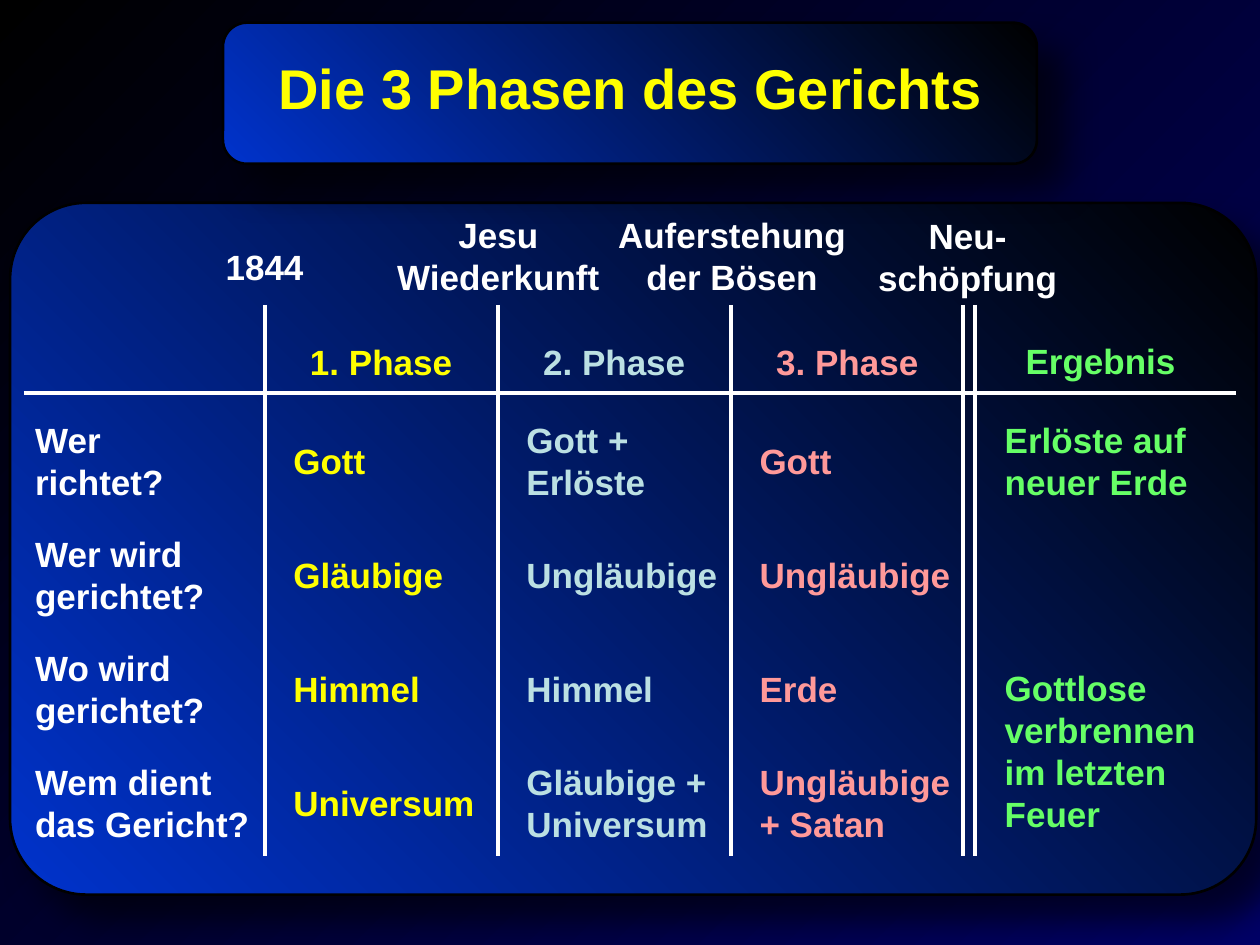
from dataclasses import dataclass

from lxml import etree
from pptx import Presentation
from pptx import util as u
from pptx.dml.color import RGBColor
from pptx.enum import shapes, text
from pptx.oxml import parse_xml
from pptx.oxml.ns import nsdecls, qn


@dataclass(frozen=True)
class Theme:
    font: str = "Arial"
    title_size: float = 32
    text_size: float = 20
    rule_width: float = 2.25
    outline_width: float = 1.5
    black: str = "000000"
    night: str = "000066"
    blue: str = "0033CC"
    white: str = "FFFFFF"
    yellow: str = "FFFF00"
    ice: str = "BBE0E3"
    rose: str = "FF9999"
    green: str = "66FF66"


class Board:
    """Draws on one slide; lengths are cells of a 100 by 75 grid."""

    columns, rows = 100, 75

    def __init__(self, presentation, theme):
        self.theme = theme
        self.cell_width = presentation.slide_width / self.columns
        self.cell_height = presentation.slide_height / self.rows
        self.slide = presentation.slides.add_slide(presentation.slide_layouts[5])

    def x(self, columns):
        return u.Emu(round(columns * self.cell_width))

    def y(self, rows):
        return u.Emu(round(rows * self.cell_height))

    def box(self, left, top, width, height):
        return self.x(left), self.y(top), self.x(width), self.y(height)

    def gradient(self, fill, first, last, angle):
        """Angle runs counter-clockwise from left-to-right."""
        fill.gradient()
        fill.gradient_angle = angle
        for stop, position, colour in zip(fill.gradient_stops, (0, 1), (first, last)):
            stop.position = position
            stop.color.rgb = RGBColor.from_string(colour)

    def background(self):
        self.gradient(self.slide.background.fill, self.theme.black, self.theme.night, 315)

    def panel(self, left, top, width, height, rounding):
        shape = self.slide.shapes.add_shape(
            shapes.MSO_SHAPE.ROUNDED_RECTANGLE, *self.box(left, top, width, height))
        shape.adjustments[0] = rounding
        self.gradient(shape.fill, self.theme.blue, self.theme.black, 45)
        shape.line.color.rgb = RGBColor.from_string(self.theme.black)
        shape.line.width = u.Pt(self.theme.outline_width)
        shape._element.spPr.append(parse_xml(
            f'<a:effectLst {nsdecls("a")}><a:outerShdw blurRad="{u.Pt(20)}" '
            f'dist="{u.Pt(20)}" dir="2700000" algn="tl" rotWithShape="0">'
            f'<a:srgbClr val="{self.theme.black}"><a:alpha val="60000"/></a:srgbClr>'
            '</a:outerShdw></a:effectLst>'))

    def rule(self, start_x, start_y, end_x, end_y):
        line = self.slide.shapes.add_connector(
            shapes.MSO_CONNECTOR.STRAIGHT,
            self.x(start_x), self.y(start_y), self.x(end_x), self.y(end_y))
        line.line.color.rgb = RGBColor.from_string(self.theme.white)
        line.line.width = u.Pt(self.theme.rule_width)
        etree.SubElement(line._element.spPr, qn("a:effectLst"))

    def set_words(self, shape, words, colour, size, alignment):
        frame = shape.text_frame
        frame.word_wrap = True
        frame.auto_size = text.MSO_AUTO_SIZE.SHAPE_TO_FIT_TEXT
        paragraph = frame.paragraphs[0]
        paragraph.alignment = alignment
        run = paragraph.add_run()
        run.text = words
        run.font.name = self.theme.font
        run.font.size = u.Pt(size)
        run.font.bold = True
        run.font.color.rgb = RGBColor.from_string(colour)

    def title(self, words, left, top, width, height):
        shape = self.slide.shapes.title
        shape.left, shape.top, shape.width, shape.height = self.box(left, top, width, height)
        self.slide.shapes._spTree.append(shape._element)  # in front of its panel
        self.set_words(shape, words, self.theme.yellow, self.theme.title_size,
                       text.PP_ALIGN.CENTER)

    def label(self, words, colour, left, middle, width, lines=1,
              alignment=text.PP_ALIGN.LEFT):
        """Text of a known number of lines, centred vertically on middle."""
        height = 1 + 3.36 * lines
        shape = self.slide.shapes.add_textbox(
            *self.box(left, middle - height / 2, width, height))
        self.set_words(shape, words, colour, self.theme.text_size, alignment)

    def heading(self, words, colour, centre, middle, width, lines=1):
        self.label(words, colour, centre - width / 2, middle, width, lines,
                   text.PP_ALIGN.CENTER)


def main():
    theme = Theme()
    presentation = Presentation()
    presentation.slide_width, presentation.slide_height = u.Inches(10), u.Inches(7.5)
    board = Board(presentation, theme)

    board.background()
    board.panel(0.8, 16.1, 98.9, 54.9, 0.11)
    board.panel(17.7, 1.8, 64.6, 11.2, 0.17)
    board.title("Die 3 Phasen des Gerichts", 18, 3.7, 64.1, 6.4)

    phase_starts = [21.05 + 18.5 * index for index in range(3)]
    result_start = 77.35
    board.rule(1.9, 31.2, 98.1, 31.2)
    for rule_x in [*phase_starts, 76.4, result_start]:
        board.rule(rule_x, 24.2, rule_x, 67.9)

    milestones = [("1844", 21, 21.2, 10.4, 1),
                  ("Jesu Wiederkunft", 39.55, 20.35, 19.3, 2),
                  ("Auferstehung der Bösen", 58.1, 20.35, 20.6, 2),
                  ("Neu-schöpfung", 76.8, 20.4, 20.6, 2)]
    for words, centre, middle, width, lines in milestones:
        board.heading(words, theme.white, centre, middle, width, lines)

    row_middles = [36.55 + 9.05 * index for index in range(4)]
    questions = [("Wer richtet?", 17.1), ("Wer wird gerichtet?", 19.1),
                 ("Wo wird gerichtet?", 19.1), ("Wem dient das Gericht?", 19.7)]
    for (words, width), middle in zip(questions, row_middles):
        board.label(words, theme.white, 1.8, middle, width, lines=2)

    phases = [
        ("1. Phase", theme.yellow,
         [("Gott", 1), ("Gläubige", 1), ("Himmel", 1), ("Universum", 1)]),
        ("2. Phase", theme.ice,
         [("Gott + Erlöste", 2), ("Ungläubige", 1), ("Himmel", 1),
          ("Gläubige + Universum", 2)]),
        ("3. Phase", theme.rose,
         [("Gott", 1), ("Ungläubige", 1), ("Erde", 1), ("Ungläubige + Satan", 2)]),
    ]
    for start, (name, colour, answers) in zip(phase_starts, phases):
        board.heading(name, colour, start + 9.2, 28.7, 17.5)
        for (words, lines), middle in zip(answers, row_middles):
            # "Gott + Erlöste" needs a narrower box to break after the sign
            width = 13.6 if words.startswith("Gott") else 18
            board.label(words, colour, start + 1.25, middle, width, lines)

    board.heading("Ergebnis", theme.green, result_start + 10, 28.6, 15.7)
    for words, middle, lines in [("Erlöste auf neuer Erde", row_middles[0], 2),
                                 ("Gottlose verbrennen im letzten Feuer", 59.65, 4)]:
        board.label(words, theme.green, result_start + 1.4, middle, 18.5, lines)

    presentation.save("out.pptx")


if __name__ == "__main__":
    main()
